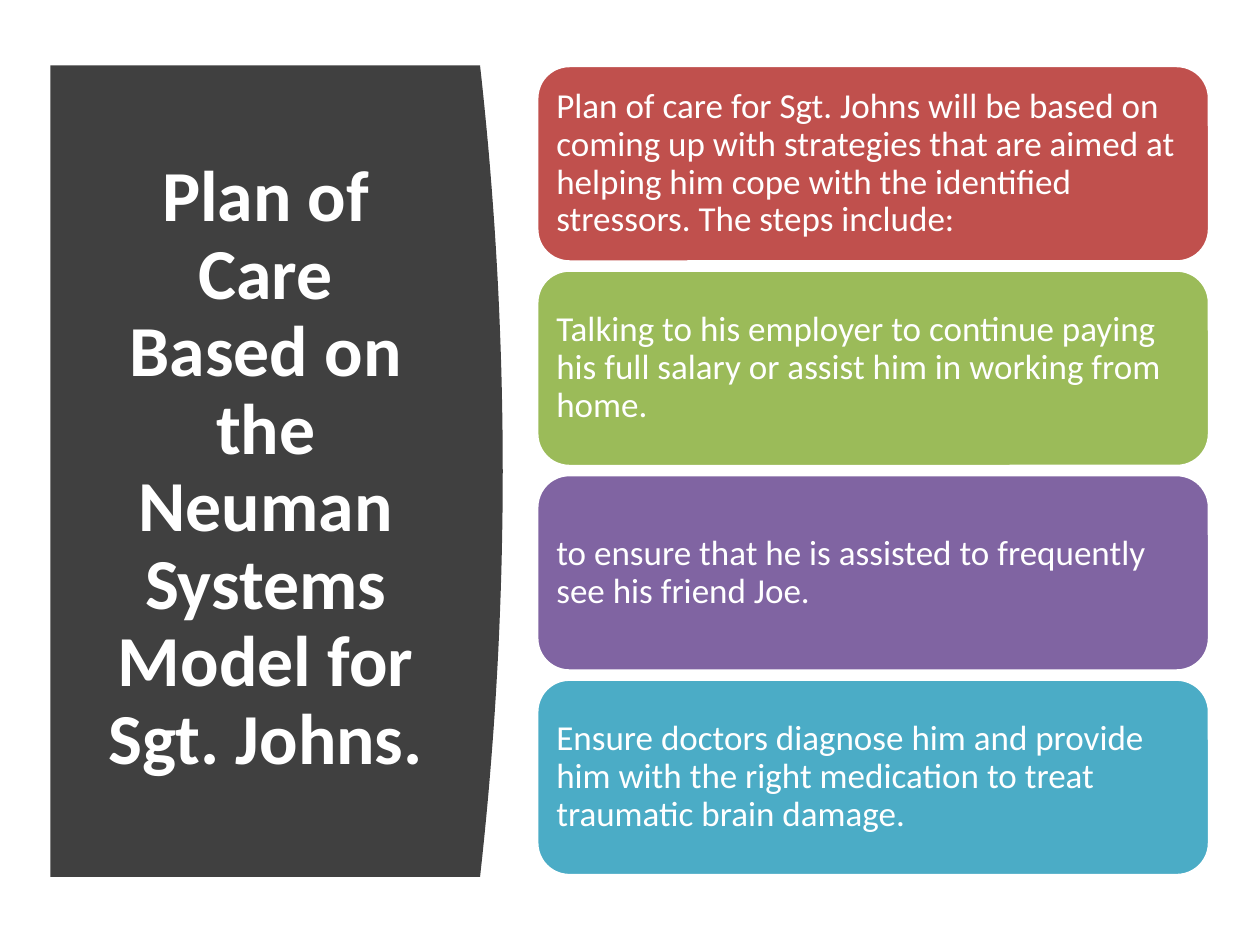
from pptx import Presentation
from pptx.dml.color import RGBColor
from pptx.enum.shapes import MSO_SHAPE as Shape
from pptx.enum.text import MSO_ANCHOR as Anchor, MSO_AUTO_SIZE as AutoSize, PP_ALIGN as Align
from pptx.util import Inches, Pt

FONT = "Calibri"
WHITE = "FFFFFF"
TITLE = "Plan of Care Based on the Neuman Systems Model for Sgt. Johns."
STEPS = [
    ("Plan of care for Sgt. Johns will be based on coming up with strategies that are "
     "aimed at helping him cope with the identified stressors. The steps include:", "C0504D"),
    ("Talking to his employer to continue paying his full salary or assist him in "
     "working from home.", "9BBB59"),
    ("to ensure that he is assisted to frequently see his friend Joe.", "8064A2"),
    ("Ensure doctors diagnose him and provide him with the right medication to treat "
     "traumatic brain damage.", "4BACC6"),
]


def color(value):
    return RGBColor.from_string(value)


def fill_shape(shape, value):
    shape.shadow.inherit = False
    shape.fill.solid()
    shape.fill.fore_color.rgb = color(value)


def write_text(shape, text, size, align, bold=False):
    text_frame = shape.text_frame
    text_frame.text = text
    text_frame.word_wrap = True
    text_frame.auto_size = AutoSize.NONE
    text_frame.vertical_anchor = Anchor.MIDDLE
    paragraph = text_frame.paragraphs[0]
    paragraph.alignment = align
    paragraph.line_spacing = 0.9
    font = paragraph.runs[0].font
    font.name = FONT
    font.size = Pt(size)
    font.bold = bold
    font.color.rgb = color(WHITE)


def add_panel(slide):
    left, top, height = 0.4, 0.52, 6.44
    corner, bulge, segments = 3.81, 0.18, 40
    edge = []
    for step in range(segments + 1):
        offset = 2 * step / segments - 1
        x = corner + bulge * (1 - offset ** 2)
        edge.append((Inches(x), Inches(top + height * step / segments)))
    builder = slide.shapes.build_freeform(Inches(left), Inches(top))
    builder.add_line_segments(edge + [(Inches(left), Inches(top + height))], close=True)
    panel = builder.convert_to_shape()
    fill_shape(panel, "404040")
    panel.line.fill.background()
    return panel


def place_title(slide, panel):
    title = slide.shapes.title
    title.left, title.top = Inches(0.71), Inches(1.11)
    title.width, title.height = Inches(2.8), Inches(5.24)
    write_text(title, TITLE, 41, Align.CENTER, bold=True)
    panel._element.addnext(title._element)


def add_step(slide, top, text, value):
    card = slide.shapes.add_shape(
        Shape.ROUNDED_RECTANGLE, Inches(4.26), Inches(top), Inches(5.34), Inches(1.56))
    fill_shape(card, value)
    card.line.color.rgb = color(WHITE)
    card.line.width = Pt(2)
    write_text(card, text, 20, Align.LEFT)
    text_frame = card.text_frame
    text_frame.margin_left = text_frame.margin_right = Inches(0.08)
    text_frame.margin_top = text_frame.margin_bottom = Inches(0.08)


def main():
    presentation = Presentation()
    presentation.slide_width, presentation.slide_height = Inches(10), Inches(7.5)
    slide = presentation.slides.add_slide(presentation.slide_layouts[5])
    place_title(slide, add_panel(slide))
    first_top, last_top = 0.52, 5.39
    pitch = (last_top - first_top) / (len(STEPS) - 1)
    for index, (text, value) in enumerate(STEPS):
        add_step(slide, first_top + index * pitch, text, value)
    presentation.save("out.pptx")


if __name__ == "__main__":
    main()
